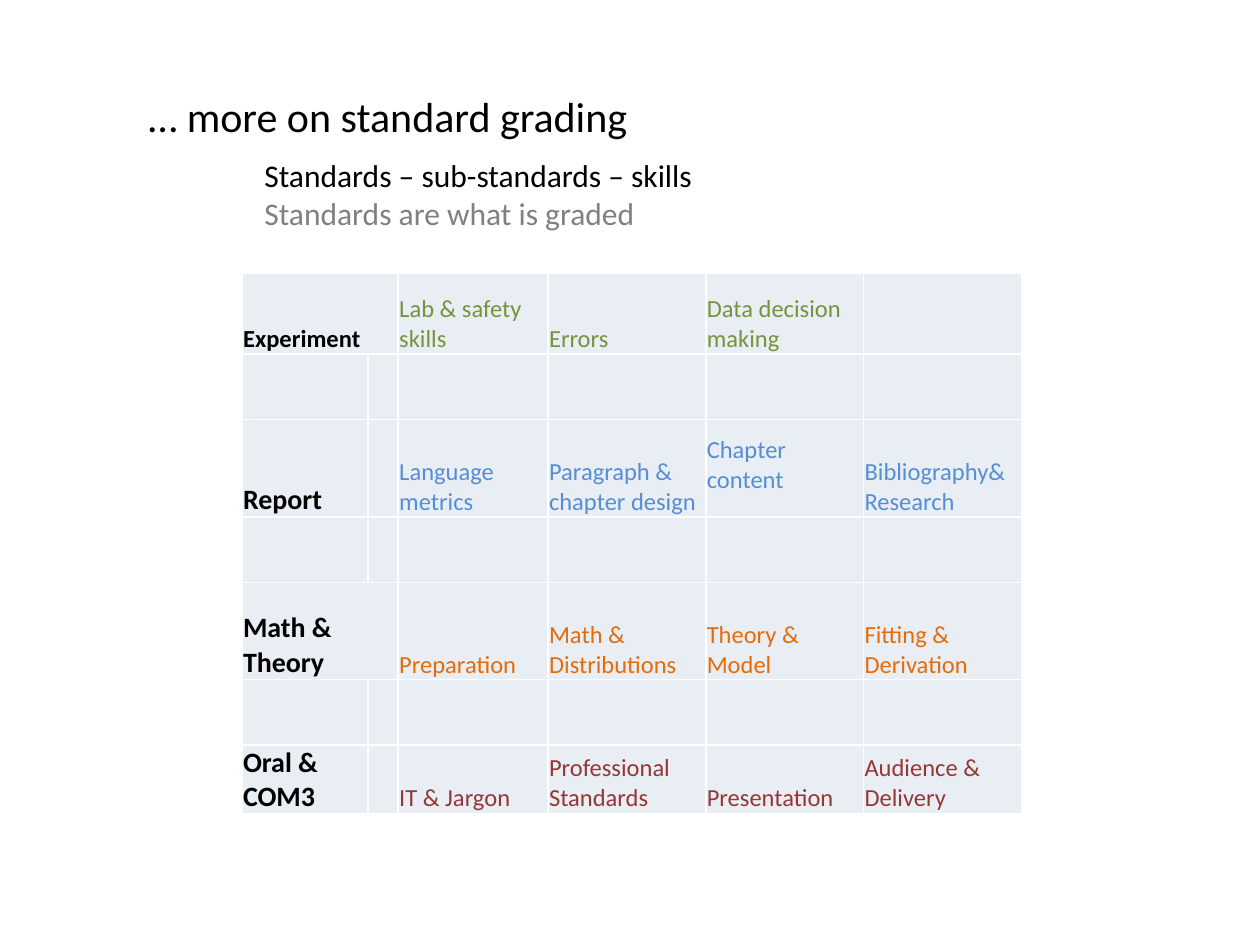
from lxml import etree
from pptx import Presentation
from pptx.dml.color import RGBColor
from pptx.enum.text import MSO_ANCHOR, MSO_AUTO_SIZE
from pptx.oxml.ns import qn
from pptx.util import Cm, Pt

BOTTOM = MSO_ANCHOR.BOTTOM
FIT_SHAPE = MSO_AUTO_SIZE.SHAPE_TO_FIT_TEXT

FONT = "Calibri"
BLACK = RGBColor(0x00, 0x00, 0x00)
GRAY = RGBColor(0x80, 0x80, 0x80)
GREEN = RGBColor(0x77, 0x93, 0x3C)
BLUE = RGBColor(0x55, 0x8E, 0xD5)
ORANGE = RGBColor(0xE4, 0x6C, 0x0A)
RED = RGBColor(0x95, 0x37, 0x35)
CELL_FILL = RGBColor(0xE9, 0xED, 0xF4)
BORDER = RGBColor(0xFF, 0xFF, 0xFF)

COL_WIDTHS = [2.54, 0.15, 3.02, 3.18, 3.18, 3.18]
SPACER_HEIGHT = 1.32
# standard, size, spans the narrow column, height, skill colour, skills
STANDARDS = [
    ("Experiment", 14, True, 1.63, GREEN,
     ["Lab & safety skills", "Errors", "Data decision making"]),
    ("Report", 16, False, 1.96, BLUE,
     ["Language metrics", "Paragraph & chapter design", "Chapter content",
      "Bibliography& Research"]),
    ("Math &\nTheory", 16, True, 1.96, ORANGE,
     ["Preparation", "Math & Distributions", "Theory & Model",
      "Fitting & Derivation"]),
    ("Oral & COM3", 16, False, 1.04, RED,
     ["IT & Jargon", "Professional Standards", "Presentation",
      "Audience & Delivery"]),
]
RAISED_SKILL = "Chapter content"


def format_runs(p, size, color, bold=False):
    for r in p.runs:
        r.font.name = FONT
        r.font.size = Pt(size)
        r.font.bold = bold
        r.font.color.rgb = color


def add_text(s, left, top, width, height, size, lines):
    """Add a text box from (text, colour) lines."""
    tf = s.shapes.add_textbox(Cm(left), Cm(top), Cm(width), Cm(height)).text_frame
    tf.word_wrap = False
    tf.auto_size = FIT_SHAPE
    tf.text = "\n".join(text for text, _ in lines)
    for p, (_, color) in zip(tf.paragraphs, lines):
        format_runs(p, size, color)


def style_cell(cell):
    """Give a cell its borders and fill."""
    tc_pr = cell._tc.get_or_add_tcPr()
    for side in ("a:lnL", "a:lnR", "a:lnT", "a:lnB"):
        ln = etree.SubElement(tc_pr, qn(side), w=str(Pt(1)))
        fill = etree.SubElement(ln, qn("a:solidFill"))
        etree.SubElement(fill, qn("a:srgbClr"), val=str(BORDER))
    cell.fill.solid()
    cell.fill.fore_color.rgb = CELL_FILL


def fill_cell(cell, text, size, color, bold=False):
    cell.text = text
    cell.vertical_anchor = BOTTOM
    cell.margin_left = cell.margin_right = cell.margin_top = Cm(0.02)
    cell.margin_bottom = Cm(0.45) if text == RAISED_SKILL else 0
    for p in cell.text_frame.paragraphs:
        format_runs(p, size, color, bold)


def add_standards_table(s, left, top):
    """Add the standards, one row each, with empty rows between them."""
    row_count = 2 * len(STANDARDS) - 1
    height = sum(row[3] for row in STANDARDS) + SPACER_HEIGHT * (len(STANDARDS) - 1)
    table = s.shapes.add_table(row_count, len(COL_WIDTHS), Cm(left), Cm(top),
                               Cm(sum(COL_WIDTHS)), Cm(height)).table
    table.first_row = table.horz_banding = False
    for column, width in zip(table.columns, COL_WIDTHS):
        column.width = Cm(width)
    for row in table.rows:
        row.height = Cm(SPACER_HEIGHT)
    for cell in table.iter_cells():
        style_cell(cell)
    for i, (name, size, spans, row_height, color, skills) in enumerate(STANDARDS):
        row = 2 * i
        table.rows[row].height = Cm(row_height)
        if spans:
            table.cell(row, 0).merge(table.cell(row, 1))
        fill_cell(table.cell(row, 0), name, size, BLACK, bold=True)
        for col, skill in enumerate(skills, start=2):
            fill_cell(table.cell(row, col), skill, 14, color)


def main():
    prs = Presentation()
    prs.slide_width, prs.slide_height = Cm(25.4), Cm(19.05)
    s = prs.slides.add_slide(prs.slide_layouts[6])
    add_text(s, 2.74, 1.7, 10.26, 1.27, 24, [("… more on standard grading", BLACK)])
    add_standards_table(s, 4.88, 5.51)
    add_text(s, 5.08, 3.02, 9.22, 1.8, 18,
             [("Standards – sub-standards – skills", BLACK),
              ("Standards are what is graded", GRAY)])
    prs.save("out.pptx")


if __name__ == "__main__":
    main()
